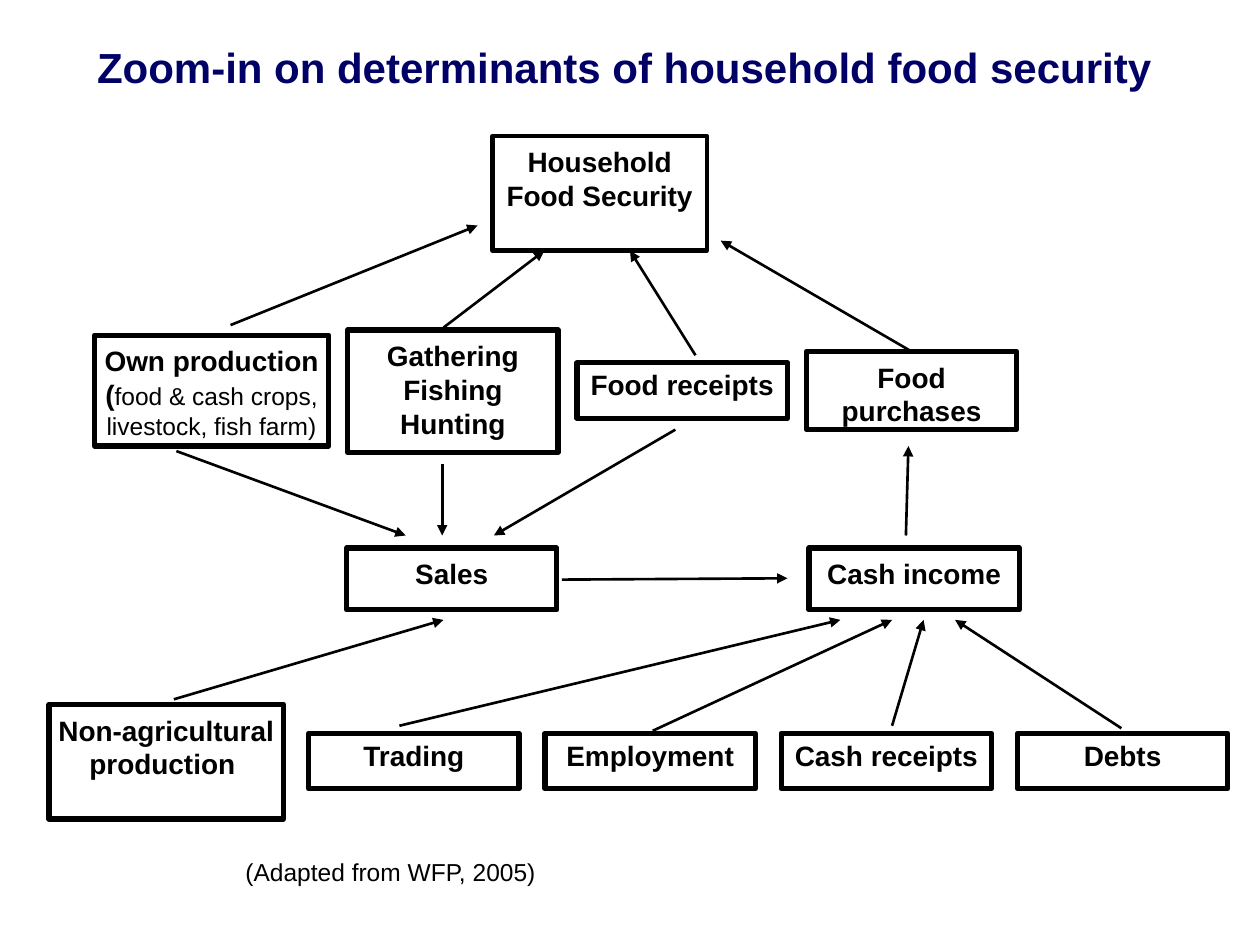
from lxml import etree
from pptx import Presentation
from pptx.dml.color import RGBColor
from pptx.enum.shapes import MSO_CONNECTOR, MSO_SHAPE
from pptx.enum.text import MSO_ANCHOR, PP_ALIGN
from pptx.oxml.ns import qn
from pptx.util import Inches, Pt

STRAIGHT = MSO_CONNECTOR.STRAIGHT
RECTANGLE = MSO_SHAPE.RECTANGLE
TOP, MIDDLE = MSO_ANCHOR.TOP, MSO_ANCHOR.MIDDLE
LEFT, CENTER = PP_ALIGN.LEFT, PP_ALIGN.CENTER
COLORS = {"title": "000066", "ink": "000000"}


def add_run(paragraph, text, size, bold, color="ink"):
    run = paragraph.add_run()
    run.text = text
    font = {"name": "Arial", "size": Pt(size), "bold": bold}
    for attribute, value in font.items():
        setattr(run.font, attribute, value)
    run.font.color.rgb = RGBColor.from_string(COLORS[color])


def format_frame(frame, anchor, wrap, top_inset, side_inset):
    settings = {
        "vertical_anchor": anchor, "word_wrap": wrap,
        "margin_left": Inches(side_inset), "margin_right": Inches(side_inset),
        "margin_top": Inches(top_inset), "margin_bottom": Inches(0.04),
    }
    for attribute, value in settings.items():
        setattr(frame, attribute, value)


prs = Presentation()
prs.slide_width, prs.slide_height = Inches(10), Inches(7.5)
slide = prs.slides.add_slide(prs.slide_layouts[5])

# Title
title = slide.shapes.title
title.left, title.top = Inches(0.67), Inches(0.25)
title.width, title.height = Inches(8.64), Inches(0.56)
format_frame(title.text_frame, MIDDLE, False, 0.04, 0.1)
heading = title.text_frame.paragraphs[0]
heading.alignment = LEFT
add_run(heading, "Zoom-in on determinants of household food security", 24, True, "title")

# Boxes: left, top, width, height, top inset, paragraphs of (text, size, bold)
STANDARD, WIDE, LOW = 1.67, 1.86, 0.44
boxes = [
    (3.91, 1.08, 1.7, 0.91, 0.07,
     [[("Household", 16, True)], [("Food Security", 16, True)]]),
    (0.75, 2.66, WIDE, 0.88, 0.07,
     [[("Own production ", 16, True)],
      [("(", 16, True), ("food & cash crops, livestock, fish farm)", 14, False)]]),
    (2.76, 2.62, STANDARD, 0.97, 0.07, [[("Gathering Fishing Hunting", 16, True)]]),
    (4.58, 2.88, STANDARD, LOW, 0.04, [[("Food receipts", 16, True)]]),
    (6.4, 2.79, STANDARD, 0.62, 0.07, [[("Food purchases", 16, True)]]),
    (2.75, 4.35, STANDARD, 0.49, 0.07, [[("Sales", 16, True)]]),
    (6.42, 4.35, STANDARD, 0.49, 0.07, [[("Cash income", 16, True)]]),
    (0.39, 5.59, WIDE, 0.91, 0.07, [[("Non-agricultural production ", 16, True)]]),
]
# The sources of cash stand in an evenly spaced row
for column, source in enumerate(["Trading", "Employment", "Cash receipts", "Debts"]):
    boxes.append((2.45 + column * 1.875, 5.82, STANDARD, LOW, 0.04, [[(source, 16, True)]]))

determinants = {}
for left, top, width, height, inset, paragraphs in boxes:
    box = slide.shapes.add_shape(
        RECTANGLE, Inches(left), Inches(top), Inches(width), Inches(height))
    box.shadow.inherit = False
    box.fill.background()
    box.line.color.rgb = RGBColor.from_string(COLORS["ink"])
    box.line.width = Pt(2.5 if top == 1.08 else 3)
    frame = box.text_frame
    format_frame(frame, TOP, True, inset, 0.07)
    for index, runs in enumerate(paragraphs):
        paragraph = frame.paragraphs[0] if index == 0 else frame.add_paragraph()
        paragraph.alignment = CENTER
        for text, size, bold in runs:
            add_run(paragraph, text, size, bold)
    determinants[paragraphs[0][0][0].strip()] = box

# Arrows: start point, end point with the head, box joined at its top
arrows = [
    # to household food security
    ((1.83, 2.58), (3.79, 1.79), None),
    ((3.52, 2.6), (4.32, 1.99), None),
    ((5.52, 2.82), (5, 1.99), None),
    ((7.24, 2.79), (5.72, 1.91), "Food purchases"),
    # to sales
    ((1.4, 3.58), (3.22, 4.25), None),
    ((3.51, 3.68), (3.51, 4.25), None),
    ((5.36, 3.41), (3.92, 4.25), None),
    ((1.38, 5.55), (3.52, 4.92), None),
    # to cash income
    ((4.46, 4.6), (6.25, 4.59), None),
    ((3.17, 5.76), (6.67, 4.92), None),
    ((5.18, 5.8), (7.08, 4.92), None),
    ((7.08, 5.76), (7.33, 4.92), None),
    ((8.9, 5.78), (7.58, 4.92), None),
    # from cash income to food purchases
    ((7.19, 4.25), (7.21, 3.54), None),
]
for start, end, origin in arrows:
    arrow = slide.shapes.add_connector(STRAIGHT, *map(Inches, start + end))
    if origin:
        arrow.begin_connect(determinants[origin], 0)
    arrow.line.color.rgb = RGBColor.from_string(COLORS["ink"])
    arrow.line.width = Pt(1.5)
    etree.SubElement(arrow.line._get_or_add_ln(), qn("a:tailEnd"), type="triangle")
    etree.SubElement(arrow._element.spPr, qn("a:effectLst"))

# Source note
note = slide.shapes.add_textbox(Inches(1.84), Inches(6.75), Inches(2.52), Inches(0.34))
format_frame(note.text_frame, MIDDLE, False, 0.04, 0.1)
credit = note.text_frame.paragraphs[0]
credit.alignment = CENTER
add_run(credit, "(Adapted from WFP, 2005)", 14, False)

prs.save("out.pptx")
